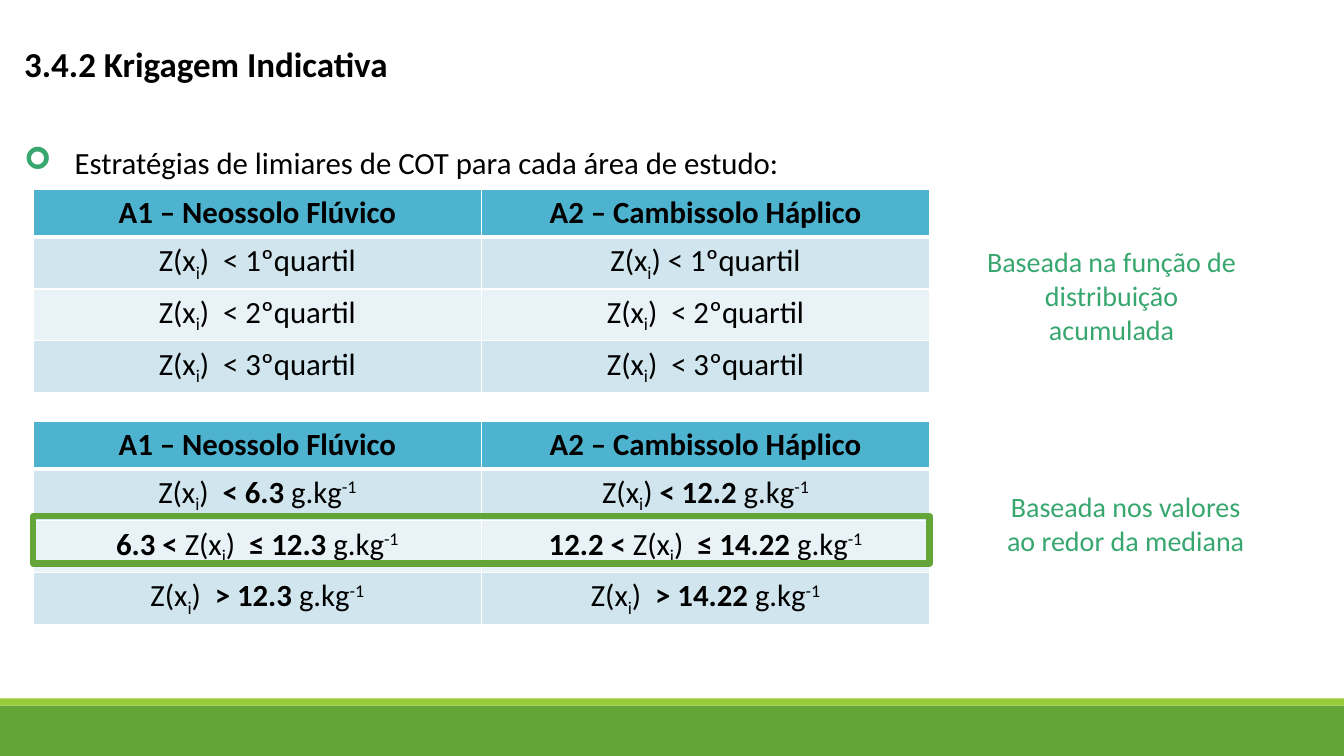
from lxml.etree import SubElement
from pptx import Presentation
from pptx.dml.color import RGBColor
from pptx.enum.shapes import MSO_SHAPE
from pptx.enum.text import MSO_ANCHOR, MSO_AUTO_SIZE, PP_ALIGN
from pptx.oxml.ns import qn
from pptx.util import Inches, Pt

BLACK = RGBColor(0x00, 0x00, 0x00)
WHITE = RGBColor(0xFF, 0xFF, 0xFF)
GREEN = RGBColor(0x63, 0xA5, 0x37)
LIME = RGBColor(0x99, 0xCB, 0x38)
TEAL = RGBColor(0x37, 0xA7, 0x6F)
HEADER_BLUE = RGBColor(0x4E, 0xB3, 0xCF)
BAND_DARK = RGBColor(0xD0, 0xE5, 0xED)
BAND_LIGHT = RGBColor(0xE9, 0xF2, 0xF6)

WIDTH, HEIGHT = 13.33, 7.5
TABLE_LEFT, TABLE_WIDTH, TABLE_HEIGHT = 0.33, 8.89, 1.87
BASELINES = {"sub": "-25000", "sup": "30000"}
AREAS = ["A1 – Neossolo Flúvico", "A2 – Cambissolo Háplico"]


def write(frame, content, size=22, color=BLACK, bold=False, align=PP_ALIGN.LEFT):
    """Write a string or a list of (text, style) runs as one paragraph."""
    paragraph = frame.paragraphs[0]
    paragraph.alignment = align
    runs = [(content, "")] if isinstance(content, str) else content
    for text, style in runs:
        run = paragraph.add_run()
        run.text = text
        run.font.name = "Calibri"
        run.font.size = Pt(size)
        run.font.bold = bold or style == "bold"
        run.font.color.rgb = color
        if style in BASELINES:
            run.font._element.set("baseline", BASELINES[style])
    return paragraph


def place(shape, box):
    """Move a shape to a box given in inches."""
    shape.left, shape.top, shape.width, shape.height = map(Inches, box)


def rectangle(slide, box, fill=None, line=None, weight=0):
    """Draw a flat rectangle with an optional fill and outline."""
    shape = slide.shapes.add_shape(MSO_SHAPE.RECTANGLE, *map(Inches, box))
    shape.shadow.inherit = False
    if fill is None:
        shape.fill.background()
    else:
        shape.fill.solid()
        shape.fill.fore_color.rgb = fill
    if line is None:
        shape.line.fill.background()
    else:
        shape.line.color.rgb = line
        shape.line.width = Pt(weight)


def footer(slide, top):
    """Draw the two green bands from top down to the slide's edge."""
    stripe = 0.07
    rectangle(slide, (0, top + stripe, WIDTH, HEIGHT - top - stripe), fill=GREEN)
    rectangle(slide, (0, top, WIDTH, stripe), fill=LIME)


def heading(title, box):
    """Fill the title placeholder."""
    place(title, box)
    frame = title.text_frame
    frame.auto_size = MSO_AUTO_SIZE.NONE
    frame.vertical_anchor = MSO_ANCHOR.TOP
    write(frame, "3.4.2 Krigagem Indicativa", size=25, bold=True)


def strategy_bullet(body, box):
    """Fill the body placeholder with one arrow bullet."""
    place(body, box)
    frame = body.text_frame
    frame.auto_size = MSO_AUTO_SIZE.NONE
    paragraph = write(frame, "Estratégias de limiares de COT para cada área de estudo:")
    paragraph.line_spacing = 1.5
    paragraph.space_before = Pt(0)
    properties = paragraph._p.get_or_add_pPr()
    properties.set("marL", str(Inches(0.5)))
    properties.set("indent", str(-Inches(0.5)))
    bullet_color = SubElement(properties, qn("a:buClr"))
    SubElement(bullet_color, qn("a:srgbClr")).set("val", str(TEAL))
    SubElement(properties, qn("a:buFont")).set("typeface", "Wingdings")
    SubElement(properties, qn("a:buChar")).set("char", "➢")


def variable(before="", gap="  "):
    """Return the runs of Z(xi) with an optional lower limit."""
    limit = [(before, "bold")] if before else []
    return limit + [("Z(x", ""), ("i", "sub"), (")" + gap, "")]


def quartile(number, gap="  "):
    """Return the runs of a quartile threshold."""
    return variable(gap=gap) + [(f"< {number}ºquartil", "")]


def content_limit(after, before="", gap="  "):
    """Return the runs of a carbon content threshold."""
    return variable(before, gap) + [(after, "bold"), ("g.kg", ""), ("-1", "sup")]


def border_cell(cell, bottom):
    """Give a cell white borders, with its own bottom width in points."""
    properties = cell._tc.get_or_add_tcPr()
    for side, weight in (("L", 1), ("R", 1), ("T", 1), ("B", bottom)):
        line = SubElement(properties, qn(f"a:ln{side}"), w=str(Pt(weight)))
        fill = SubElement(line, qn("a:solidFill"))
        SubElement(fill, qn("a:srgbClr")).set("val", str(WHITE))


def threshold_table(slide, top, thresholds):
    """Build a table of thresholds with one column for each area."""
    rows = [AREAS] + thresholds
    box = map(Inches, (TABLE_LEFT, top, TABLE_WIDTH, TABLE_HEIGHT))
    table = slide.shapes.add_table(len(rows), len(AREAS), *box).table
    for index, contents in enumerate(rows):
        is_header = index == 0
        band = BAND_DARK if index % 2 else BAND_LIGHT
        for column, content in enumerate(contents):
            cell = table.cell(index, column)
            border_cell(cell, bottom=3 if is_header else 1)
            cell.fill.solid()
            cell.fill.fore_color.rgb = HEADER_BLUE if is_header else band
            write(cell.text_frame, content, bold=is_header, align=PP_ALIGN.CENTER)


def side_note(slide, box, text):
    """Add a centred teal remark beside a table."""
    frame = slide.shapes.add_textbox(*map(Inches, box)).text_frame
    frame.word_wrap = True
    write(frame, text, size=20, color=TEAL, align=PP_ALIGN.CENTER)


def kriging_slide(presentation):
    """Build the slide on indicator kriging thresholds."""
    slide = presentation.slides.add_slide(presentation.slide_layouts[1])
    footer(slide, top=6.93)
    heading(slide.shapes.title, (0.14, 0.37, 11.28, 0.52))
    strategy_bullet(slide.placeholders[1], (0.14, 1.19, 12.69, 0.59))
    threshold_table(slide, 4.18, [
        [content_limit("< 6.3 "), content_limit("< 12.2 ", gap=" ")],
        [content_limit("≤ 12.3 ", before="6.3 < "),
         content_limit("≤ 14.22 ", before="12.2 < ")],
        [content_limit("> 12.3 "), content_limit("> 14.22 ")],
    ])
    threshold_table(slide, 1.88, [
        [quartile(1), quartile(1, gap=" ")],
        [quartile(2), quartile(2)],
        [quartile(3), quartile(3)],
    ])
    side_note(slide, (9.68, 2.38, 2.69, 1.11),
              "Baseada na função de distribuição acumulada")
    side_note(slide, (9.82, 4.81, 2.69, 0.77),
              "Baseada nos valores ao redor da mediana")
    rectangle(slide, (TABLE_LEFT, 5.12, TABLE_WIDTH, 0.47), line=GREEN, weight=4.5)


def main():
    """Create and save the presentation."""
    presentation = Presentation()
    presentation.slide_width = Inches(WIDTH)
    presentation.slide_height = Inches(HEIGHT)
    kriging_slide(presentation)
    presentation.save("out.pptx")


if __name__ == "__main__":
    main()
